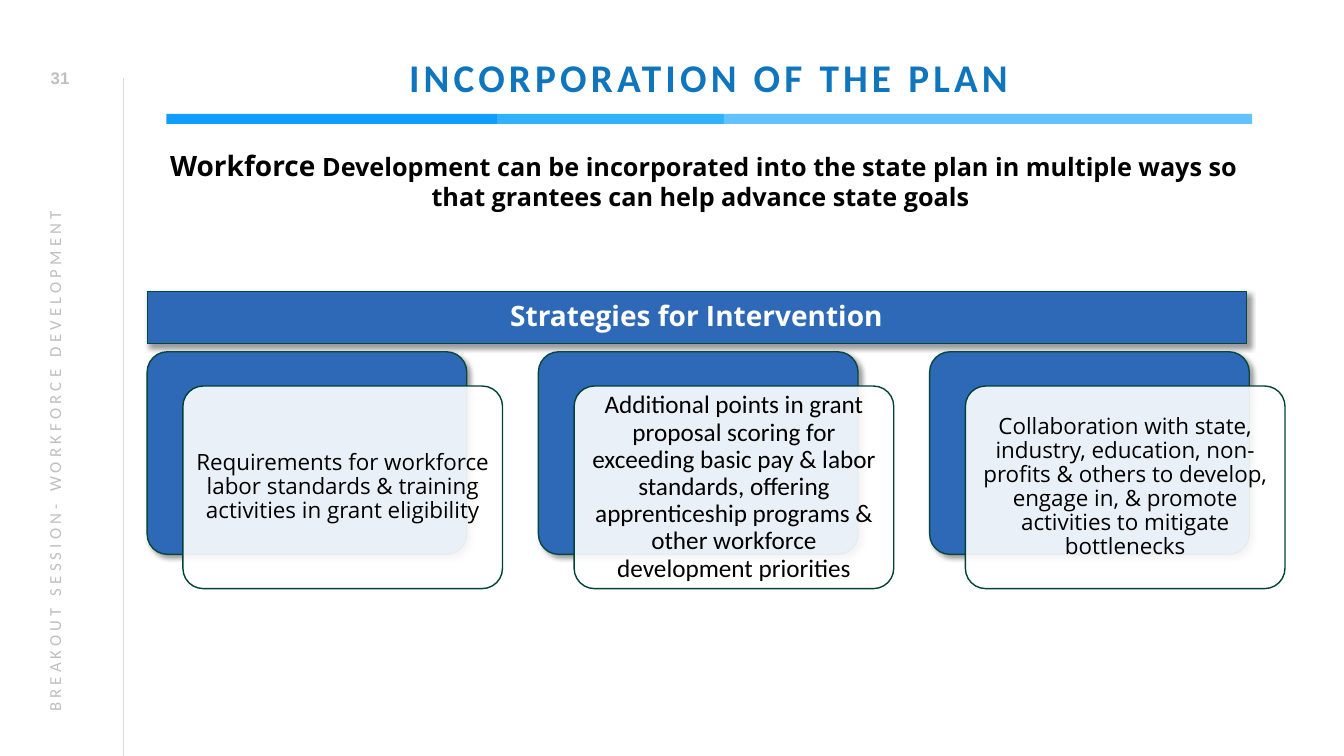
from dataclasses import dataclass

from lxml import etree
from pptx import Presentation
from pptx.dml.color import RGBColor
from pptx.enum.shapes import MSO_CONNECTOR, MSO_SHAPE
from pptx.enum.text import MSO_ANCHOR, PP_ALIGN
from pptx.oxml.ns import qn
from pptx.util import Inches, Pt

SLIDE_WIDTH, SLIDE_HEIGHT = 13.33, 7.5


@dataclass(frozen=True)
class Theme:
    # Colours
    title: str = "0F75BC"
    muted: str = "BFBFBF"
    rule: str = "D9D9D9"
    bars: tuple = ("119DFF", "31B2FF", "62C1FF")
    panel: str = "2D69B6"
    panel_line: str = "08473D"
    card_line: str = "014136"
    black: str = "000000"
    white: str = "FFFFFF"
    # Fonts and sizes
    heading_font: str = "Calibri"
    body_font: str = "Open Sans"
    number_font: str = "Arial"
    title_size: int = 28
    lead_size: int = 20
    large_size: int = 18
    card_size: int = 16
    small_size: int = 12


THEME = Theme()

CARDS = (
    ("Requirements for workforce labor standards & training activities in "
     "grant eligibility", THEME.body_font, THEME.card_size),
    ("Additional points in grant proposal scoring for exceeding basic pay & "
     "labor standards, offering apprenticeship programs & other workforce "
     "development priorities", THEME.heading_font, THEME.large_size),
    ("Collaboration with state, industry, education, non-profits & others to "
     "develop, engage in, & promote activities to mitigate bottlenecks",
     THEME.body_font, THEME.card_size),
)


def across(percent):
    return Inches(SLIDE_WIDTH * percent / 100)


def down(percent):
    return Inches(SLIDE_HEIGHT * percent / 100)


def frame(left, top, width, height):
    """Turn shares of the slide, in percent, into lengths."""
    return across(left), down(top), across(width), down(height)


def color(value):
    return RGBColor.from_string(value)


def format_run(run, font, size, fill, bold=False, spacing=0):
    run.font.name = font
    run.font.size = Pt(size)
    run.font.bold = bold
    run.font.color.rgb = color(fill)
    if spacing:
        run._r.get_or_add_rPr().set("spc", str(spacing * 100))


def write(shape, text, font, size, fill, bold=False, spacing=0,
          align=PP_ALIGN.CENTER, anchor=MSO_ANCHOR.MIDDLE, line_spacing=1.0,
          insets=(0.1, 0.05, 0.1, 0.05)):
    text_frame = shape.text_frame
    text_frame.text = text
    text_frame.word_wrap = True
    text_frame.vertical_anchor = anchor
    (text_frame.margin_left, text_frame.margin_top,
     text_frame.margin_right, text_frame.margin_bottom) = map(Inches, insets)
    paragraph = text_frame.paragraphs[0]
    paragraph.alignment = align
    paragraph.line_spacing = line_spacing
    format_run(paragraph.runs[0], font, size, fill, bold, spacing)
    return paragraph


def add_text(slide, place, *content, **options):
    shape = slide.shapes.add_textbox(*frame(*place))
    return shape, write(shape, *content, **options)


def add_panel(slide, kind, place, fill, line=None, line_width=1):
    shape = slide.shapes.add_shape(kind, *frame(*place))
    shape.shadow.inherit = False
    shape.fill.solid()
    shape.fill.fore_color.rgb = color(fill)
    if line:
        shape.line.color.rgb = color(line)
        shape.line.width = Pt(line_width)
    else:
        shape.line.fill.background()
    if kind == MSO_SHAPE.ROUNDED_RECTANGLE:
        shape.adjustments[0] = 0.1
    return shape


def set_alpha(color_element, percent):
    etree.SubElement(color_element, qn("a:alpha"), val=str(percent * 1000))


def cast_shadow(shape):
    effects = shape._element.spPr.find(qn("a:effectLst"))
    shadow = etree.SubElement(
        effects, qn("a:outerShdw"), blurRad=str(Pt(4)), dist=str(Pt(3)),
        dir=str(45 * 60000), algn="tl", rotWithShape="0")
    set_alpha(etree.SubElement(shadow, qn("a:srgbClr"), val=THEME.black), 40)


def add_margin(slide):
    # Vertical rule, slide number and session name
    rule = slide.shapes.add_connector(
        MSO_CONNECTOR.STRAIGHT, across(9.15), down(100), across(9.15), down(10.27))
    rule.line.color.rgb = color(THEME.rule)
    rule.line.width = Pt(0.5)
    etree.SubElement(rule._element.spPr, qn("a:effectLst"))
    add_text(slide, (2.03, 7.6, 4.88, 5.33), "31", THEME.number_font,
             THEME.small_size, THEME.muted, bold=True)
    session, _ = add_text(
        slide, (-18.15, 52.67, 45.16, 5.33),
        "BREAKOUT SESSION- WORKFORCE DEVELOPMENT", THEME.heading_font,
        THEME.small_size, THEME.muted, spacing=3, align=PP_ALIGN.LEFT,
        anchor=MSO_ANCHOR.TOP)
    session.rotation = 270


def add_header(slide):
    # Title over a three-part bar
    left = 12.38
    for fill, width in zip(THEME.bars, (24.6, 16.88, 39.31)):
        add_panel(slide, MSO_SHAPE.RECTANGLE, (left, 15.07, width, 1.33), fill)
        left += width
    add_text(slide, (12.38, 5.33, 80.72, 9.87), "INCORPORATION OF THE PLAN",
             THEME.heading_font, THEME.title_size, THEME.title, bold=True,
             spacing=3, line_spacing=0.9, insets=(0, 0.05, 0, 0))

    # Introduction with a larger first word
    _, paragraph = add_text(
        slide, (12.38, 18.93, 80.72, 9.87), "Workforce", THEME.body_font,
        THEME.lead_size, THEME.black, bold=True, anchor=MSO_ANCHOR.TOP,
        insets=(0, 0.05, 0.1, 0.05))
    run = paragraph.add_run()
    run.text = (" Development can be incorporated into the state plan in "
                "multiple ways so that grantees can help advance state goals ")
    format_run(run, THEME.body_font, THEME.large_size, THEME.black, bold=True)


def add_card(slide, left, text, font, size):
    top, width, height = 46.53, 23.78, 26.8
    rounded = MSO_SHAPE.ROUNDED_RECTANGLE
    back = add_panel(slide, rounded, (left, top, width, height),
                     THEME.panel, THEME.panel_line)
    cast_shadow(back)
    # Translucent front, shifted right and down
    left, top = left + 2.66, top + 4.53
    front = add_panel(slide, rounded, (left, top, width, height),
                      THEME.white, THEME.card_line)
    set_alpha(front._element.spPr.find(qn("a:solidFill"))[0], 90)
    add_text(slide, (left + 0.45, top + 0.8, width - 0.9, height - 1.6),
             text, font, size, THEME.black, line_spacing=0.9,
             insets=(0.07, 0.07, 0.07, 0.07))


def add_strategies(slide):
    left, step = 10.95, 29.11
    banner = add_panel(slide, MSO_SHAPE.RECTANGLE, (left, 38.53, 81.77, 6.93),
                       THEME.panel, THEME.panel_line, 0.75)
    cast_shadow(banner)
    write(banner, "Strategies for Intervention", THEME.body_font,
          THEME.lead_size, THEME.white, bold=True, line_spacing=0.9)
    for column, card in enumerate(CARDS):
        add_card(slide, left + column * step, *card)


def main():
    presentation = Presentation()
    presentation.slide_width = Inches(SLIDE_WIDTH)
    presentation.slide_height = Inches(SLIDE_HEIGHT)
    slide = presentation.slides.add_slide(presentation.slide_layouts[6])
    add_margin(slide)
    add_header(slide)
    add_strategies(slide)
    presentation.save("out.pptx")


if __name__ == "__main__":
    main()
